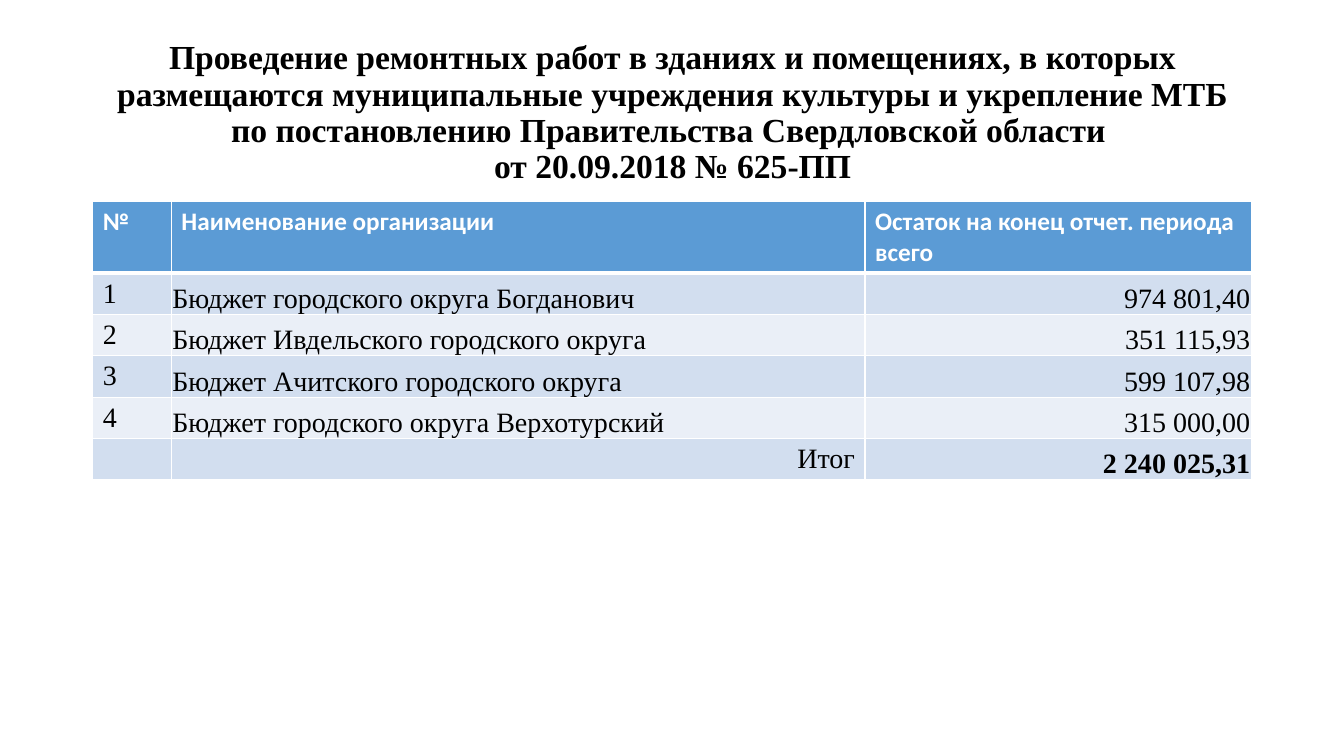
from lxml import etree
from pptx import Presentation
from pptx import util as u
from pptx.dml.color import RGBColor
from pptx.enum import text
from pptx.oxml import ns

TITLE = (
    "Проведение ремонтных работ в зданиях и помещениях, в которых "
    "размещаются муниципальные учреждения культуры и укрепление МТБ "
    "по постановлению Правительства Свердловской области \v"
    "от 20.09.2018 № 625-ПП"
)
ROWS = [
    ("№", "Наименование организации", "Остаток на конец отчет. периода всего"),
    ("1", "Бюджет городского округа Богданович", "974 801,40"),
    ("2", "Бюджет Ивдельского городского округа", "351 115,93"),
    ("3", "Бюджет Ачитского городского округа", "599 107,98"),
    ("4", "Бюджет городского округа Верхотурский", "315 000,00"),
    ("", "Итог", "2 240 025,31"),
]

BLACK = RGBColor(0x00, 0x00, 0x00)
WHITE = RGBColor(0xFF, 0xFF, 0xFF)
HEADER_BLUE = RGBColor(0x5B, 0x9B, 0xD5)
BANDS = [RGBColor(0xEA, 0xEF, 0xF7), RGBColor(0xD2, 0xDE, 0xEF)]

PX = 9144
PAGE_SIZE = (1333, 750)
TITLE_BOX = (92, 40, 1150, 145)
TABLE_LEFT, TABLE_TOP = 92, 200
COLUMN_WIDTHS = (78, 688, 383)
HEADER_HEIGHT, ROW_HEIGHT = 70, 41

TITLE_FONT = {"name": "Times New Roman", "size": u.Pt(24), "bold": True}
HEADER_FONT = {"name": "Calibri", "size": u.Pt(18), "bold": True}
BODY_FONT = {"name": "Times New Roman", "size": u.Pt(20), "bold": False}
TIGHT_CELL = {
    "margin_left": PX,
    "margin_right": PX,
    "margin_top": PX,
    "margin_bottom": 0,
    "vertical_anchor": text.MSO_ANCHOR.BOTTOM,
}


def apply(target, values):
    for name, value in values.items():
        setattr(target, name, value)


def style_font(font, values, color):
    apply(font, values)
    font.color.rgb = color


def add_borders(cell, bottom_points):
    properties = cell._tc.get_or_add_tcPr()
    for side, points in (("L", 1), ("R", 1), ("T", 1), ("B", bottom_points)):
        line = etree.SubElement(properties, ns.qn("a:ln" + side), w=str(u.Pt(points)))
        fill = etree.SubElement(line, ns.qn("a:solidFill"))
        etree.SubElement(fill, ns.qn("a:srgbClr"), val=str(WHITE))


def add_title(page):
    box = page.shapes.title
    for name, length in zip(("left", "top", "width", "height"), TITLE_BOX):
        setattr(box, name, length * PX)
    frame = box.text_frame
    apply(frame, {"text": TITLE, "word_wrap": True,
                  "auto_size": text.MSO_AUTO_SIZE.NONE,
                  "vertical_anchor": text.MSO_ANCHOR.MIDDLE})
    para = frame.paragraphs[0]
    apply(para, {"alignment": text.PP_ALIGN.CENTER, "line_spacing": 0.9})
    for span in para.runs:
        style_font(span.font, TITLE_FONT, BLACK)


def fill_cell(cell, row, column):
    header = row == 0
    total = row == len(ROWS) - 1
    cell.text = ROWS[row][column]
    para = cell.text_frame.paragraphs[0]
    style_font(para.font, HEADER_FONT if header else BODY_FONT, WHITE if header else BLACK)
    for span in para.runs:
        style_font(span.font, HEADER_FONT if header else BODY_FONT, WHITE if header else BLACK)
        if total and column == 2:
            span.font.bold = True
    right = not header and (column == 2 or total)
    para.alignment = text.PP_ALIGN.RIGHT if right else text.PP_ALIGN.LEFT
    if not header and (column == 2 or column == 1 and not total):
        apply(cell, TIGHT_CELL)
    add_borders(cell, 3 if header else 1)
    cell.fill.solid()
    cell.fill.fore_color.rgb = HEADER_BLUE if header else BANDS[row % 2]


def add_budget_table(page):
    heights = [HEADER_HEIGHT] + [ROW_HEIGHT] * (len(ROWS) - 1)
    table = page.shapes.add_table(
        len(ROWS), len(COLUMN_WIDTHS), TABLE_LEFT * PX, TABLE_TOP * PX,
        sum(COLUMN_WIDTHS) * PX, sum(heights) * PX,
    ).table
    for column, width in zip(table.columns, COLUMN_WIDTHS):
        column.width = width * PX
    for row, height in enumerate(heights):
        table.rows[row].height = height * PX
        for column in range(len(COLUMN_WIDTHS)):
            fill_cell(table.cell(row, column), row, column)


def main():
    deck = Presentation()
    deck.slide_width, deck.slide_height = (length * PX for length in PAGE_SIZE)
    page = deck.slides.add_slide(deck.slide_layouts[5])
    add_title(page)
    add_budget_table(page)
    deck.save("out.pptx")


if __name__ == "__main__":
    main()
